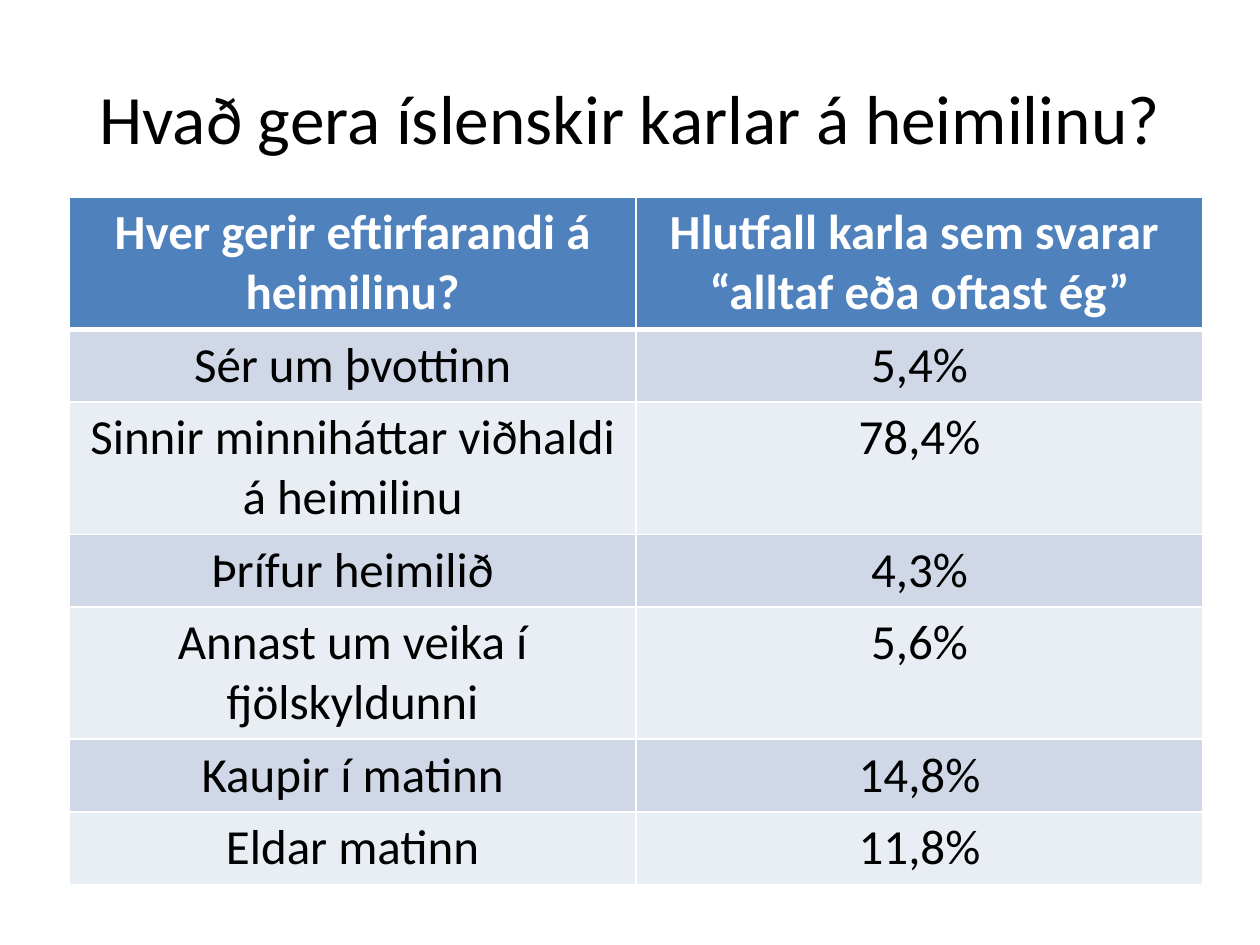
import dataclasses

import lxml.etree
import pptx
import pptx.dml.color
import pptx.enum.text
import pptx.oxml.ns
import pptx.util


@dataclasses.dataclass(frozen=True)
class Theme:
    """Colours, font and type sizes of the slide."""
    font: str = "Calibri"
    title_size: float = 39.6
    table_size: float = 28
    ink: str = "000000"
    paper: str = "FFFFFF"
    header: str = "4F81BD"
    bands: tuple = ("D0D8E8", "E9EDF4")
    rule: float = 1
    header_rule: float = 3


THEME = Theme()
PIXELS_PER_INCH = 126
SLIDE_SIZE = (1260, 945)
TITLE_BOX = (63, 38, 1134, 157)
TABLE_BOX = (69, 197, 1134, 684)
SINGLE_ROW, DOUBLE_ROW = 72, 132

TITLE = "Hvað gera íslenskir karlar á heimilinu?"
ROWS = [
    ("Hver gerir eftirfarandi á heimilinu?",
     "Hlutfall karla sem svarar \n“alltaf eða oftast ég”", DOUBLE_ROW),
    ("Sér um þvottinn", "5,4%", SINGLE_ROW),
    ("Sinnir minniháttar viðhaldi á heimilinu", "78,4%", DOUBLE_ROW),
    ("Þrífur heimilið", "4,3%", SINGLE_ROW),
    ("Annast um veika í fjölskyldunni", "5,6%", DOUBLE_ROW),
    ("Kaupir í matinn", "14,8%", SINGLE_ROW),
    ("Eldar matinn", "11,8%", SINGLE_ROW),
]


def px(length):
    """Turn pixels into EMU."""
    return pptx.util.Emu(round(length * 914400 / PIXELS_PER_INCH))


def rgb(value):
    """Turn a hex string into a colour."""
    return pptx.dml.color.RGBColor.from_string(value)


def format_text(text_frame, size, color, bold=False):
    """Centre every paragraph and format its runs."""
    for paragraph in text_frame.paragraphs:
        paragraph.alignment = pptx.enum.text.PP_ALIGN.CENTER
        for run in paragraph.runs:
            run.font.name = THEME.font
            run.font.size = pptx.util.Pt(size)
            run.font.bold = bold
            run.font.color.rgb = rgb(color)


def set_borders(cell, widths):
    """Draw cell borders, with widths in points by side tag, ahead of the fill."""
    properties = cell._tc.get_or_add_tcPr()
    qualified = pptx.oxml.ns.qn
    for index, (side, width) in enumerate(widths.items()):
        line = lxml.etree.Element(qualified(f"a:{side}"), w=str(pptx.util.Pt(width)))
        fill = lxml.etree.SubElement(line, qualified("a:solidFill"))
        lxml.etree.SubElement(fill, qualified("a:srgbClr"), val=THEME.paper)
        properties.insert(index, line)


def add_title(slide, box):
    """Place the title in its box."""
    title = slide.shapes.title
    title.left, title.top, title.width, title.height = map(px, box)
    title.text_frame.text = TITLE
    title.text_frame.word_wrap = True
    title.text_frame.vertical_anchor = pptx.enum.text.MSO_ANCHOR.MIDDLE
    format_text(title.text_frame, THEME.title_size, THEME.ink)


def add_answer_table(slide, box):
    """Place the table of chores and shares in its box."""
    table = slide.shapes.add_table(len(ROWS), 2, *map(px, box)).table
    for column in table.columns:
        column.width = px(box[2] / 2)
    for row_index, (chore, share, height) in enumerate(ROWS):
        table.rows[row_index].height = px(height)
        is_header = row_index == 0
        fill = THEME.header if is_header else THEME.bands[(row_index - 1) % 2]
        widths = dict.fromkeys(("lnL", "lnR", "lnT", "lnB"), THEME.rule)
        if is_header:
            widths["lnB"] = THEME.header_rule
        elif row_index == 1:
            widths["lnT"] = THEME.header_rule
        for column_index, text in enumerate((chore, share)):
            cell = table.cell(row_index, column_index)
            cell.text_frame.text = text
            cell.fill.solid()
            cell.fill.fore_color.rgb = rgb(fill)
            set_borders(cell, widths)
            color = THEME.paper if is_header else THEME.ink
            format_text(cell.text_frame, THEME.table_size, color, is_header)


def main():
    """Build and save the presentation."""
    presentation = pptx.Presentation()
    presentation.slide_width, presentation.slide_height = map(px, SLIDE_SIZE)
    slide = presentation.slides.add_slide(presentation.slide_layouts[5])
    add_title(slide, TITLE_BOX)
    add_answer_table(slide, TABLE_BOX)
    presentation.save("out.pptx")


if __name__ == "__main__":
    main()
